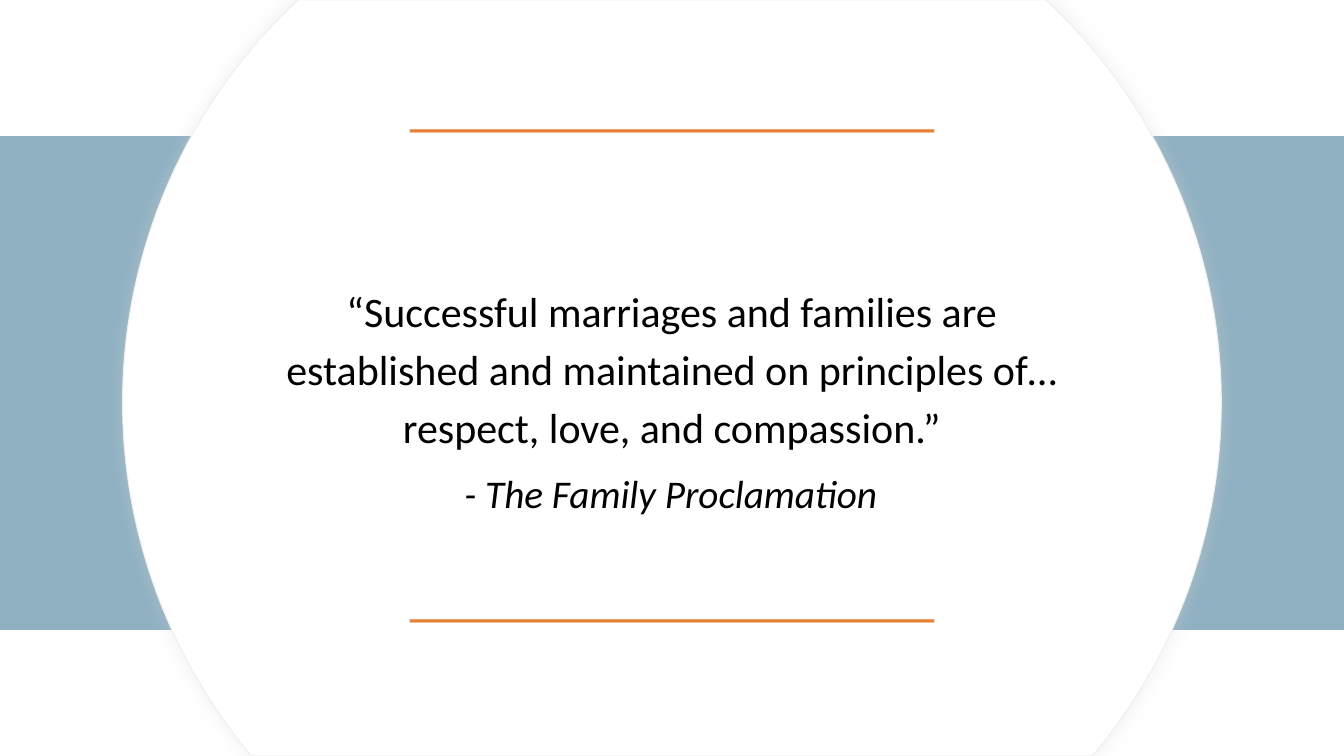
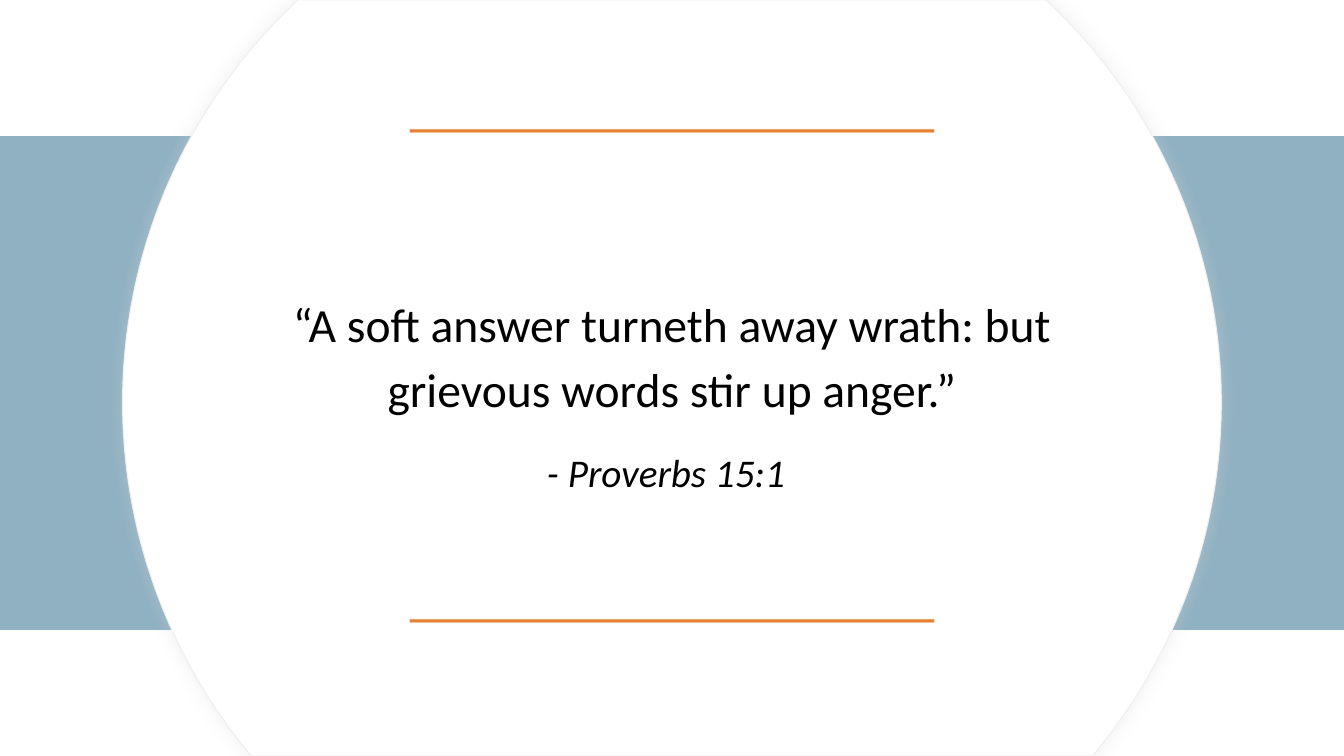
from math import asin, cos, pi, sin, tan

from lxml.etree import SubElement
from pptx import Presentation
from pptx.dml.color import RGBColor
from pptx.enum.shapes import MSO_SHAPE
from pptx.enum.text import MSO_ANCHOR, MSO_AUTO_SIZE, PP_ALIGN
from pptx.oxml.ns import qn
from pptx.util import Pt

WIDTH, HEIGHT = 960, 540
FONT = "Calibri"
UNITS = 100
COLOURS = {
    "paper": "FFFFFF",
    "band": "90B1C2",
    "edge": "EFEFEF",
    "glow": "D8D8D8",
    "rule": "ED7D31",
    "rule_edge": "D09D5C",
    "ink": "000000",
}
QUOTES = [
    {
        "quote": "“Successful marriages and families are established and maintained "
                 "on principles of…respect, love, and compassion.”",
        "quote_size": 30,
        "quote_box": (174.5, 191.5, 611, 140),
        "source": "- The Family Proclamation",
        "source_box": (324.5, 331.5, 311, 41),
    },
    {
        "quote": "“A soft answer turneth away wrath: but grievous words stir up anger.”",
        "quote_size": 34,
        "quote_box": (159, 197, 642, 109),
        "source": "- Proverbs 15:1",
        "source_box": (383.5, 316.5, 193, 41),
    },
]


def colour(name):
    return RGBColor.from_string(COLOURS[name])


def set_alpha(colour_element, percent):
    SubElement(colour_element, qn("a:alpha"), val=str(percent * 1000))


def paint(shape, fill, line):
    shape.shadow.inherit = False
    shape.fill.solid()
    shape.fill.fore_color.rgb = colour(fill)
    shape.line.color.rgb = colour(line)
    shape.line.width = Pt(0.75)


def add_bar(page, box, fill, line):
    bar = page.shapes.add_shape(MSO_SHAPE.RECTANGLE, *map(Pt, box))
    paint(bar, fill, line)
    return bar


def add_rule(page, box):
    rule = add_bar(page, box, "rule", "rule_edge")
    set_alpha(next(rule.line._ln.iter(qn("a:srgbClr"))), 30)


def add_glow(shape, blur, alpha):
    effects = shape._element.spPr.find(qn("a:effectLst"))
    shadow = SubElement(effects, qn("a:outerShdw"), blurRad=str(Pt(blur)),
                        dist="0", dir="0", algn="ctr", rotWithShape="0")
    set_alpha(SubElement(shadow, qn("a:srgbClr"), val=COLOURS["glow"]), alpha)


def bend(segment, start, end, centre, radius, origin):
    reach = 4 / 3 * tan((end - start) / 4)
    controls = [
        (cos(start) - reach * sin(start), sin(start) + reach * cos(start)),
        (cos(end) + reach * sin(end), sin(end) - reach * cos(end)),
        (cos(end), sin(end)),
    ]
    curve = SubElement(segment.getparent(), qn("a:cubicBezTo"))
    for unit in controls:
        x, y = (round((middle + radius * part - corner) * UNITS)
                for middle, part, corner in zip(centre, unit, origin))
        SubElement(curve, qn("a:pt"), x=str(x), y=str(y))
    segment.getparent().replace(segment, curve)


def add_disc(page, box, centre_y, radius):
    left, top, width, height = box
    centre = (left + width / 2, centre_y)
    upper = asin((top - centre_y) / radius)
    lower = asin((top + height - centre_y) / radius)
    angles = [pi - upper, upper, 0, lower, pi - lower, pi, pi - upper]
    points = [((centre[0] + radius * cos(angle)) * UNITS,
               (centre[1] + radius * sin(angle)) * UNITS) for angle in angles]
    builder = page.shapes.build_freeform(*points[0], scale=Pt(1) / UNITS)
    builder.add_line_segments(points[1:], close=True)
    disc = builder.convert_to_shape()
    segments = list(disc._element.iter(qn("a:lnTo")))
    origin = (centre[0] - radius, top)
    for index in (1, 2, 4, 5):
        bend(segments[index], angles[index], angles[index + 1], centre, radius, origin)
    paint(disc, "paper", "edge")
    add_glow(disc, blur=11, alpha=36)


def add_backdrop(page, box):
    left, top, width, height = box
    add_bar(page, (left, top + 97.5, width, 352.5), "band", "band")
    add_disc(page, box, centre_y=top + 287.5, radius=392.4)
    rule_width = 374.5
    for rule_top in (92.5, 442.5):
        add_rule(page, (left + (width - rule_width) / 2, top + rule_top, rule_width, 2))


def write(holder, text, box, size, italic=False, align=PP_ALIGN.LEFT,
          spacing=1.0, inset=3.6):
    holder.left, holder.top, holder.width, holder.height = map(Pt, box)
    frame = holder.text_frame
    frame.word_wrap = True
    frame.auto_size = MSO_AUTO_SIZE.NONE
    frame.vertical_anchor = MSO_ANCHOR.TOP
    frame.margin_left = frame.margin_right = Pt(7.2)
    frame.margin_top = frame.margin_bottom = Pt(inset)
    para = frame.paragraphs[0]
    para.alignment = align
    para.line_spacing = spacing
    para.space_before = para.space_after = Pt(0)
    properties = para._p.get_or_add_pPr()
    properties.set("marL", "0")
    properties.set("indent", "0")
    SubElement(properties, qn("a:buNone"))
    span = para.add_run()
    span.text = text
    span.font.name = FONT
    span.font.size = Pt(size)
    span.font.italic = italic
    span.font.color.rgb = colour("ink")


def bring_to_front(page, holder):
    page.shapes._spTree.append(holder._element)


def add_quote_page(deck, content):
    page = deck.slides.add_slide(deck.slide_layouts[1])
    page.background.fill.solid()
    page.background.fill.fore_color.rgb = colour("paper")
    add_backdrop(page, (0, 0, WIDTH, HEIGHT))
    title, body = page.shapes.title, page.placeholders[1]
    write(title, content["quote"], content["quote_box"], content["quote_size"],
          align=PP_ALIGN.CENTER, spacing=1.15, inset=7.2)
    write(body, content["source"], content["source_box"], 28, italic=True)
    for holder in (title, body):
        bring_to_front(page, holder)


def main():
    deck = Presentation()
    deck.slide_width, deck.slide_height = Pt(WIDTH), Pt(HEIGHT)
    for content in QUOTES:
        add_quote_page(deck, content)
    deck.save("out.pptx")


if __name__ == "__main__":
    main()
